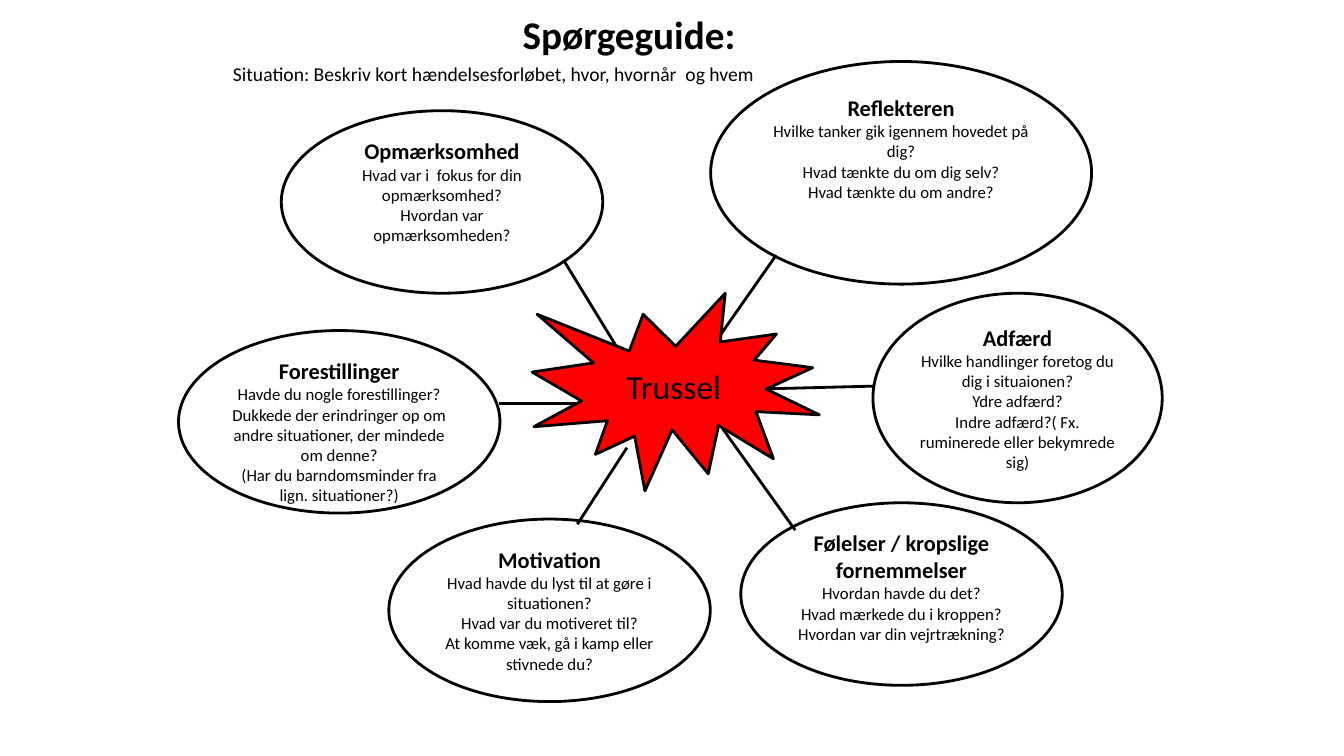
import pptx
import pptx.dml.color
import pptx.enum.shapes
import pptx.enum.text
import pptx.util
from lxml import etree

Cm, Pt = pptx.util.Cm, pptx.util.Pt
SHAPE = pptx.enum.shapes.MSO_SHAPE
ALIGN = pptx.enum.text.PP_ALIGN
ANCHOR = pptx.enum.text.MSO_ANCHOR
BLACK, RED = "000000", "FF0000"


def color(hex_string):
    return pptx.dml.color.RGBColor.from_string(hex_string)


def write(shape, lines, align, anchor=ANCHOR.TOP, margin=0.1):
    """Fill a shape with (text, size, bold) lines."""
    frame = shape.text_frame
    frame.word_wrap = True
    frame.vertical_anchor = anchor
    frame.margin_left = frame.margin_top = frame.margin_bottom = 0
    frame.margin_right = Cm(margin)
    for number, (text, size, bold) in enumerate(lines):
        paragraph = frame.add_paragraph() if number else frame.paragraphs[0]
        paragraph.text = text
        paragraph.alignment = align
        paragraph._p.get_or_add_pPr().set("marL", str(Cm(margin)))
        paragraph.font.name = "Calibri"
        paragraph.font.size = Pt(size)
        paragraph.font.bold = bold
        paragraph.font.color.rgb = color(BLACK)


presentation = pptx.Presentation()
presentation.slide_width, presentation.slide_height = Cm(33.87), Cm(19.05)
slide = presentation.slides.add_slide(presentation.slide_layouts[6])
shapes = slide.shapes

# Question bubbles: left, top, width, height, heading, questions
bubbles = [
    (7.09, 2.79, 8.1, 4.6, "Opmærksomhed",
     ["Hvad var i  fokus for din opmærksomhed?", "Hvordan var opmærksomheden?"]),
    (9.8, 13.08, 8.1, 4.6, "Motivation",
     ["Hvad havde du lyst til at gøre i situationen?", "Hvad var du motiveret til?",
      "At komme væk, gå i kamp eller stivnede du?"]),
    (18.67, 12.67, 8.1, 4.6, "Følelser / kropslige fornemmelser",
     ["Hvordan havde du det?", "Hvad mærkede du i kroppen?",
      "Hvordan var din vejrtrækning?"]),
    (4.5, 8.33, 8.1, 4.6, "Forestillinger",
     ["Havde du nogle forestillinger?",
      "Dukkede der erindringer op om andre situationer, der mindede om denne?",
      "(Har du barndomsminder fra lign. situationer?)"]),
    (22, 7.39, 7.29, 5.28, "Adfærd",
     ["Hvilke handlinger foretog du dig i situaionen?", "Ydre adfærd?",
      "Indre adfærd?( Fx. ruminerede eller bekymrede sig)"]),
    (17.91, 1.55, 9.6, 5.61, "Reflekteren",
     ["Hvilke tanker gik igennem hovedet på dig?", "Hvad tænkte du om dig selv?",
      "Hvad tænkte du om andre?"]),
]
for left, top, width, height, heading, questions in bubbles:
    bubble = shapes.add_shape(SHAPE.OVAL, Cm(left), Cm(top), Cm(width), Cm(height))
    bubble.shadow.inherit = False
    bubble.fill.background()
    bubble.line.color.rgb = color(BLACK)
    bubble.line.width = Pt(2)
    write(bubble, [(heading, 16, True)] + [(question, 12, False) for question in questions],
          ALIGN.CENTER)

# Spokes between the threat and the bubbles
spokes = [
    (19.25, 9.8, 22, 9.73),
    (15.8, 11.28, 14.55, 13.21),
    (18.21, 10.8, 20.04, 13.36),
    (14.2, 6.55, 15.57, 8.79),
    (12.57, 10.16, 14.55, 10.16),
    (19.56, 6.43, 17.91, 8.79),
]
for ends in spokes:
    spoke = shapes.add_connector(pptx.enum.shapes.MSO_CONNECTOR.STRAIGHT,
                                 *[Cm(end) for end in ends])
    spoke.line.color.rgb = color(BLACK)
    spoke.line.width = Pt(2)
    etree.SubElement(spoke._element.spPr, pptx.oxml.ns.qn("a:effectLst"))

# Situation
situation = shapes.add_textbox(Cm(5.77), Cm(1.55), Cm(24.31), Cm(0.97))
write(situation, [("Situation: Beskriv kort hændelsesforløbet, hvor, hvornår  og hvem", 14, False)],
      ALIGN.LEFT)

# Threat in the centre
threat = shapes.add_shape(SHAPE.EXPLOSION1, Cm(13.41), Cm(7.39), Cm(7.24), Cm(4.98))
threat.shadow.inherit = False
threat.fill.solid()
threat.fill.fore_color.rgb = color(RED)
threat.line.color.rgb = color(BLACK)
threat.line.width = Pt(2)
write(threat, [("Trussel", 24, False)], ALIGN.CENTER, ANCHOR.MIDDLE, 0.23)

# Title
title = shapes.add_textbox(Cm(11.66), Cm(0.13), Cm(8.38), Cm(2.24))
write(title, [("Spørgeguide:", 28, True)], ALIGN.CENTER, margin=0.25)
title.text_frame.margin_top = Cm(0.13)

presentation.save("out.pptx")
